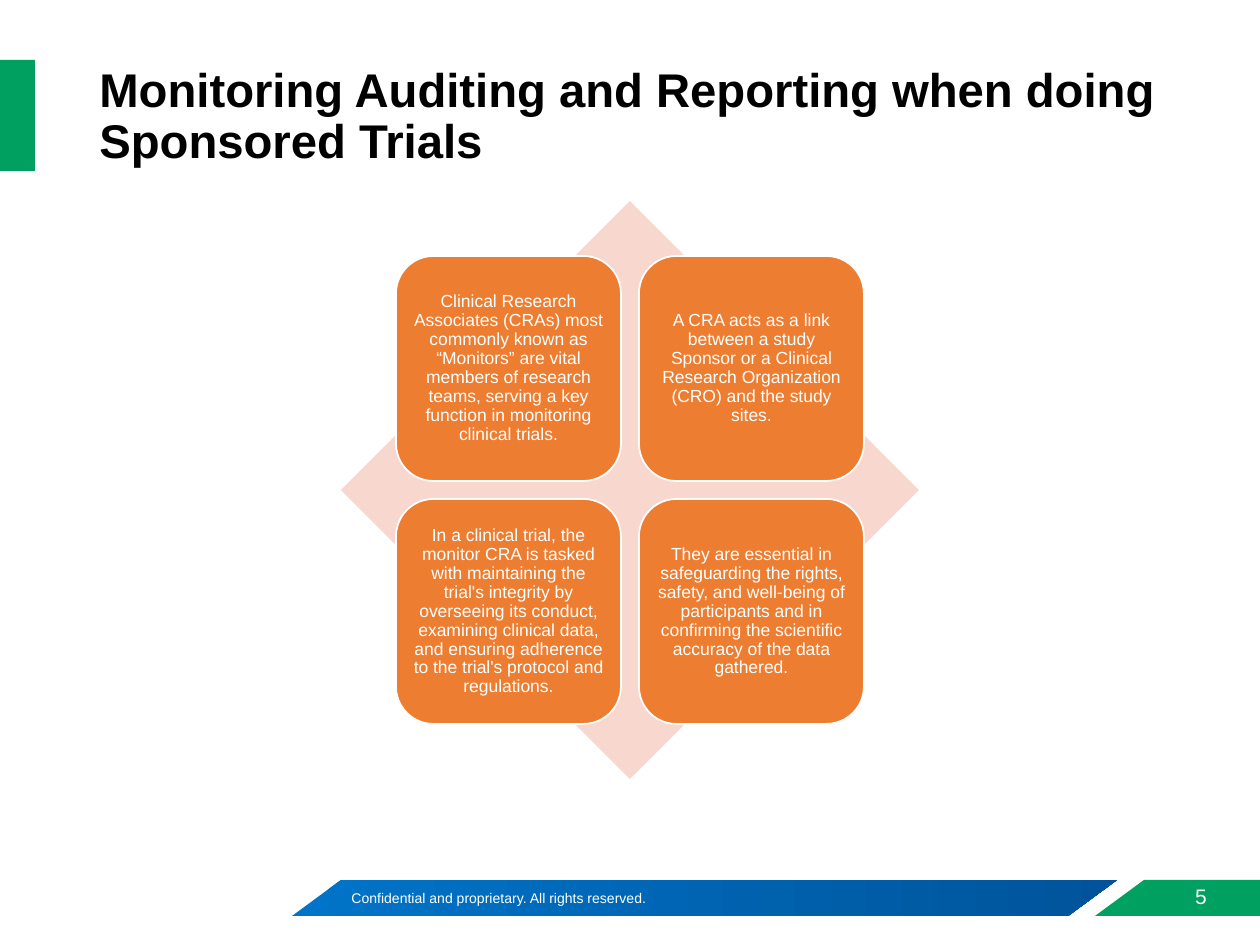
from pptx import Presentation
from pptx.dml.color import RGBColor
from pptx.enum.shapes import MSO_SHAPE
from pptx.enum.text import MSO_ANCHOR, PP_ALIGN
from pptx.util import Pt

PX = 914400 / 126  # EMU per pixel
RECT, DIAMOND = MSO_SHAPE.RECTANGLE, MSO_SHAPE.DIAMOND
ROUNDED, SLANTED = MSO_SHAPE.ROUNDED_RECTANGLE, MSO_SHAPE.PARALLELOGRAM
TOP, MIDDLE, BOTTOM = MSO_ANCHOR.TOP, MSO_ANCHOR.MIDDLE, MSO_ANCHOR.BOTTOM
LEFT, CENTER = PP_ALIGN.LEFT, PP_ALIGN.CENTER

GREEN, ORANGE, PEACH, WHITE = "00A160", "ED7D31", "F8D7CE", "FFFFFF"
BLUES = ("0074C8", "00539B")

TILES = [
    "Clinical Research Associates (CRAs) most commonly known as “Monitors” are vital "
    "members of research teams, serving a key function in monitoring clinical trials.",
    "A CRA acts as a link between a study Sponsor or a Clinical Research Organization "
    "(CRO) and the study sites.",
    "In a clinical trial, the monitor CRA is tasked with maintaining the trial's integrity "
    "by overseeing its conduct, examining clinical data, and ensuring adherence to the "
    "trial's protocol and regulations.",
    "They are essential in safeguarding the rights, safety, and well-being of participants "
    "and in confirming the scientific accuracy of the data gathered.",
]


def px(*values):
    return [round(v * PX) for v in values]


def rgb(hex_color):
    return RGBColor.from_string(hex_color)


def write(sp, text, size, color=WHITE, bold=False, align=LEFT, anchor=TOP,
          spacing=1.0, inset=None):
    tf = sp.text_frame
    tf.word_wrap = True
    tf.vertical_anchor = anchor
    if inset is not None:
        tf.margin_left = tf.margin_right = tf.margin_top = tf.margin_bottom = px(inset)[0]
    p = tf.paragraphs[0]
    p.alignment = align
    p.line_spacing = spacing
    r = p.add_run()
    r.text = text
    r.font.name = "Arial"
    r.font.size = Pt(size)
    r.font.bold = bold
    r.font.color.rgb = rgb(color)


class Deck:
    def __init__(self, width, height):
        self.prs = Presentation()
        self.prs.slide_width, self.prs.slide_height = px(width, height)
        self.s = self.prs.slides.add_slide(self.prs.slide_layouts[6])

    def paint(self, sp, fill, line=None):
        sp.shadow.inherit = False
        if isinstance(fill, tuple):
            sp.fill.gradient()
            sp.fill.gradient_angle = 0
            for stop, color in zip(sp.fill.gradient_stops, fill):
                stop.color.rgb = rgb(color)
        else:
            sp.fill.solid()
            sp.fill.fore_color.rgb = rgb(fill)
        if line:
            sp.line.color.rgb = rgb(line)
            sp.line.width = Pt(1)
        else:
            sp.line.fill.background()
        return sp

    def shape(self, kind, box, fill, line=None, adjust=None):
        sp = self.s.shapes.add_shape(kind, *px(*box))
        if adjust is not None:
            sp.adjustments[0] = adjust
        return self.paint(sp, fill, line)

    def outline(self, points, fill):
        builder = self.s.shapes.build_freeform(*points[0], scale=PX)
        builder.add_line_segments(points[1:], close=True)
        return self.paint(builder.convert_to_shape(), fill)

    def text(self, box, text, size, **style):
        write(self.s.shapes.add_textbox(*px(*box)), text, size, **style)


def main():
    deck = Deck(1260, 945)

    # Footer band and title accent
    deck.shape(SLANTED, (292, 880, 825, 36), BLUES, adjust=1.36)
    deck.shape(RECT, (0, 60, 35, 111), GREEN)
    deck.text((339, 883, 483, 30), "Confidential and proprietary. All rights reserved.", 8)
    deck.outline([(1095, 916), (1144, 880), (1260, 880), (1260, 916)], GREEN)

    # Title
    deck.text((87, 64, 1086, 111), "Monitoring Auditing and Reporting when doing Sponsored Trials",
              27, color="000000", bold=True, anchor=BOTTOM, spacing=0.9)

    # Diamond with a two by two grid of tiles
    deck.shape(DIAMOND, (341, 201, 578, 578), PEACH)
    left, top, side, pitch = 396, 256, 225, 243
    for i, message in enumerate(TILES):
        row, col = divmod(i, 2)
        box = (left + col * pitch, top + row * pitch, side, side)
        tile = deck.shape(ROUNDED, box, ORANGE, line=WHITE)
        write(tile, message, 10, align=CENTER, anchor=MIDDLE, spacing=0.9, inset=5)

    # Page number
    deck.text((1172, 877, 58, 39), "5", 12, align=CENTER, anchor=MIDDLE)

    deck.prs.save("out.pptx")


if __name__ == "__main__":
    main()
